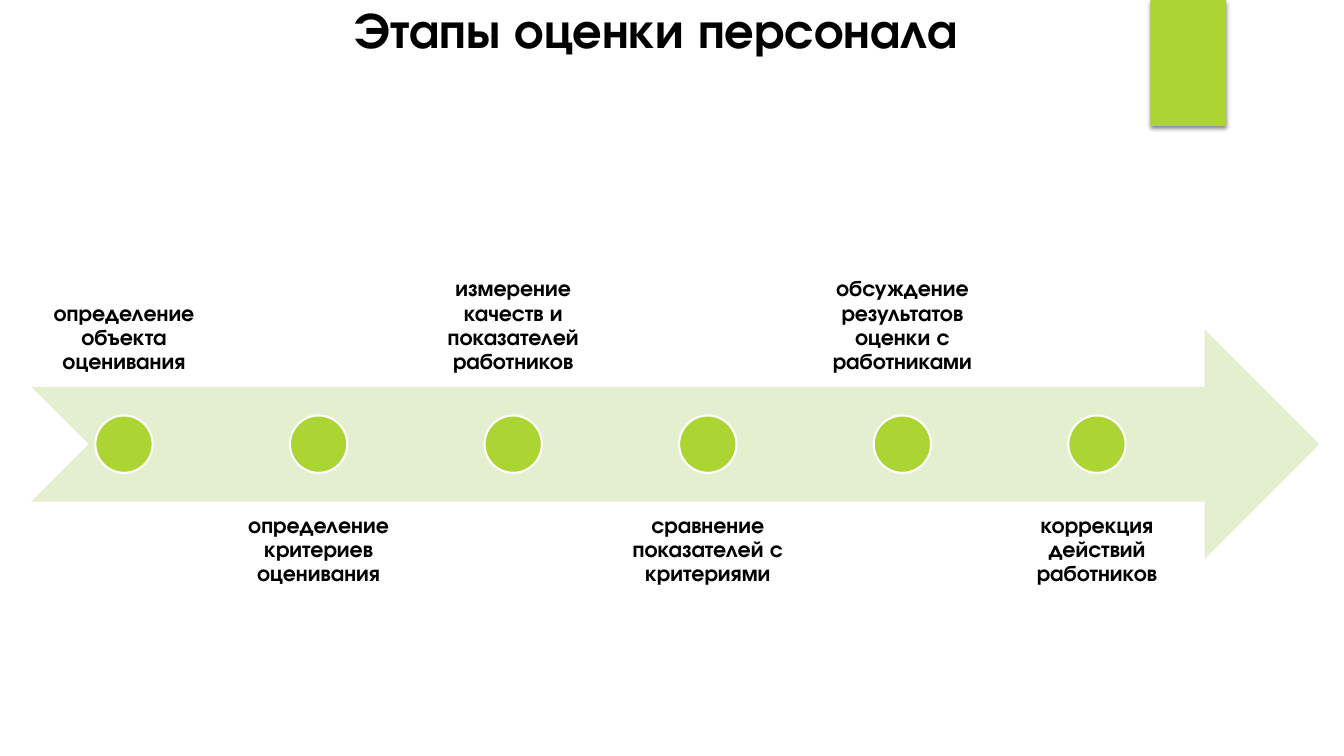
from dataclasses import dataclass

from lxml import etree
from pptx import Presentation
from pptx.dml.color import RGBColor
from pptx.enum.shapes import MSO_SHAPE
from pptx.enum.text import MSO_ANCHOR, MSO_AUTO_SIZE, PP_ALIGN
from pptx.oxml.ns import qn
from pptx.util import Pt

RECTANGLE = MSO_SHAPE.RECTANGLE
OVAL = MSO_SHAPE.OVAL
ARROW = MSO_SHAPE.NOTCHED_RIGHT_ARROW
TOP, MIDDLE, BOTTOM = MSO_ANCHOR.TOP, MSO_ANCHOR.MIDDLE, MSO_ANCHOR.BOTTOM
CENTER = PP_ALIGN.CENTER
NO_AUTOFIT = MSO_AUTO_SIZE.NONE
TITLE_ONLY = 5


@dataclass(frozen=True)
class Theme:
    font: str = "TeX Gyre Adventor"
    text: str = "000000"
    accent: str = "ACD433"
    band: str = "E3EFCE"
    outline: str = "FFFFFF"
    title_size: float = 36
    label_size: float = 16


class SlideBuilder:
    def __init__(self, presentation, theme):
        self.theme = theme
        self.slide = presentation.slides.add_slide(presentation.slide_layouts[TITLE_ONLY])

    def set_text(self, shape, text, size, anchor, line_spacing=1.0):
        frame = shape.text_frame
        frame.text = text
        frame.word_wrap = True
        frame.auto_size = NO_AUTOFIT
        frame.vertical_anchor = anchor
        paragraph = frame.paragraphs[0]
        paragraph.alignment = CENTER
        paragraph.line_spacing = line_spacing
        for run in paragraph.runs:
            run.font.name = self.theme.font
            run.font.size = Pt(size)
            run.font.bold = True
            run.font.color.rgb = RGBColor.from_string(self.theme.text)

    def title(self, text, left, top, width, height):
        shape = self.slide.shapes.title
        shape.left, shape.top = Pt(left), Pt(top)
        shape.width, shape.height = Pt(width), Pt(height)
        self.set_text(shape, text, self.theme.title_size, MIDDLE)

    def shape(self, kind, left, top, width, height, fill, outlined=False):
        shape = self.slide.shapes.add_shape(kind, Pt(left), Pt(top), Pt(width), Pt(height))
        shape.shadow.inherit = False
        shape.fill.solid()
        shape.fill.fore_color.rgb = RGBColor.from_string(fill)
        if outlined:
            shape.line.color.rgb = RGBColor.from_string(self.theme.outline)
            shape.line.width = Pt(1.5)
        else:
            shape.line.fill.background()
        return shape

    def shadow(self, shape, blur, distance, opacity):
        effects = shape.element.spPr.find(qn("a:effectLst"))
        outer = etree.SubElement(effects, qn("a:outerShdw"), blurRad=str(Pt(blur)),
                                 dist=str(Pt(distance)), dir="5400000", rotWithShape="0")
        color = etree.SubElement(outer, qn("a:srgbClr"), val=self.theme.text)
        etree.SubElement(color, qn("a:alpha"), val=str(opacity * 1000))

    def label(self, text, left, top, width, height, anchor):
        box = self.slide.shapes.add_textbox(Pt(left), Pt(top), Pt(width), Pt(height))
        frame = box.text_frame
        frame.margin_left = frame.margin_right = Pt(8.96)
        frame.margin_top = frame.margin_bottom = Pt(8.96)
        self.set_text(box, text, self.theme.label_size, anchor, 0.9)


STAGES = [
    "определение объекта оценивания",
    "определение критериев оценивания",
    "измерение качеств и показателей работников",
    "сравнение показателей с критериями",
    "обсуждение результатов оценки с работниками",
    "коррекция действий работников",
]
ARROW_LEFT, ARROW_TOP, ARROW_WIDTH, ARROW_HEIGHT = 22.4, 235.3, 920, 164
LABEL_WIDTH, STAGE_STEP = 132.4, 139
UPPER_TOP, LOWER_TOP = 112.3, 358.3
DOT_SIZE = ARROW_HEIGHT / 4


def main():
    presentation = Presentation()
    presentation.slide_width, presentation.slide_height = Pt(960), Pt(540)
    theme = Theme()
    builder = SlideBuilder(presentation, theme)

    tab = builder.shape(RECTANGLE, 821.7, 0, 54, 90, theme.accent)
    builder.shadow(tab, 3, 2, 45)
    builder.title("Этапы оценки персонала", 123.8, 0, 690, 40.3)
    builder.shape(ARROW, ARROW_LEFT, ARROW_TOP, ARROW_WIDTH, ARROW_HEIGHT, theme.band)

    dot_top = ARROW_TOP + (ARROW_HEIGHT - DOT_SIZE) / 2
    for index, stage in enumerate(STAGES):
        left = ARROW_LEFT + index * STAGE_STEP
        top, anchor = (LOWER_TOP, TOP) if index % 2 else (UPPER_TOP, BOTTOM)
        builder.label(stage, left, top, LABEL_WIDTH, ARROW_HEIGHT, anchor)
        dot_left = left + (LABEL_WIDTH - DOT_SIZE) / 2
        builder.shape(OVAL, dot_left, dot_top, DOT_SIZE, DOT_SIZE, theme.accent, outlined=True)

    presentation.save("out.pptx")


if __name__ == "__main__":
    main()
